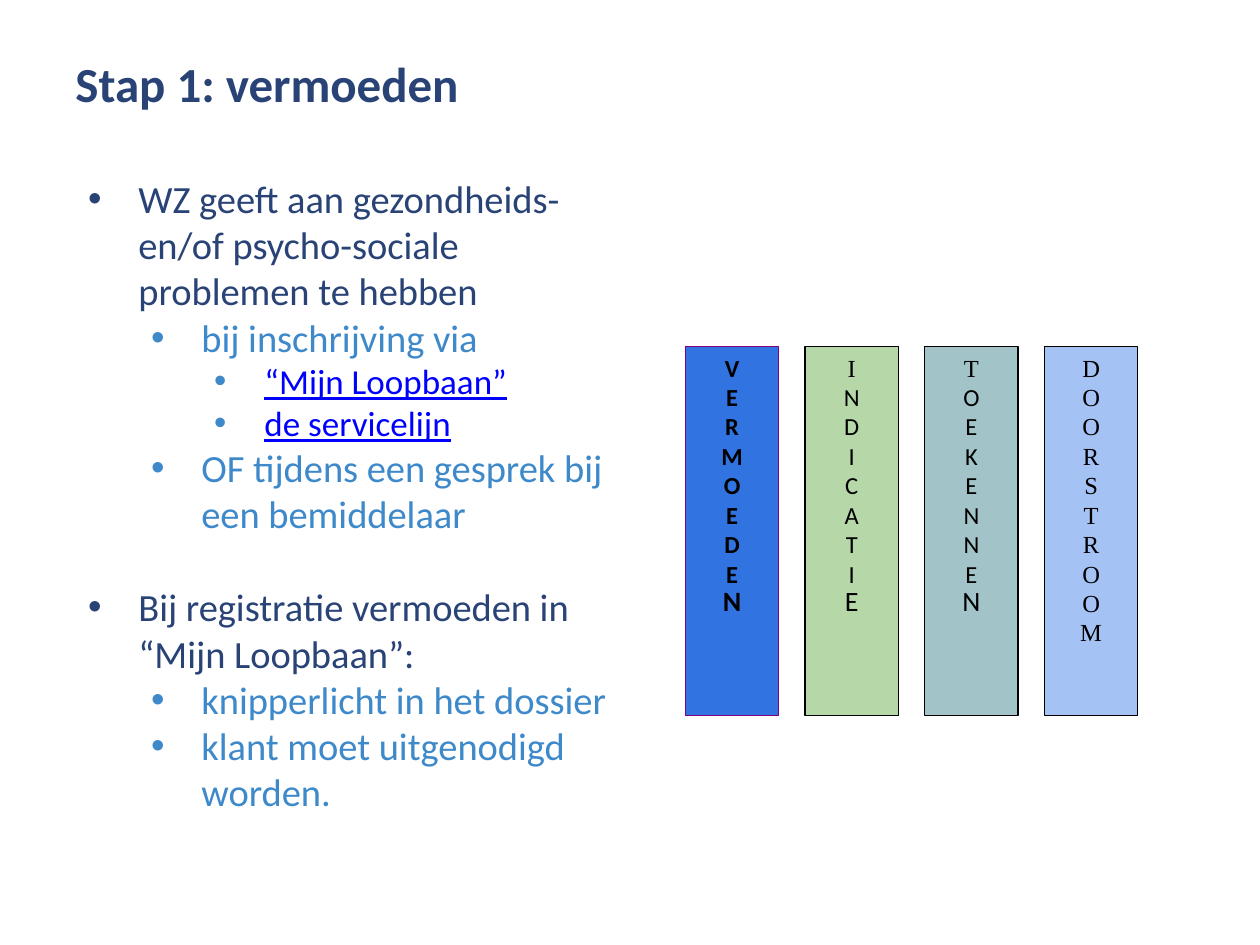
from pptx import Presentation
from pptx.dml.color import RGBColor
from pptx.enum import shapes, text
from pptx.oxml.ns import qn
from pptx.util import Inches, Pt
from lxml import etree

COLORS = {
    "navy": "294376", "sky": "3E89CA", "link": "0000FF", "black": "000000",
    "purple": "800080", "blue": "3174E1", "green": "B6D7A8",
    "teal": "A2C4C9", "pale": "A4C2F4",
}
SANS, SERIF = "Calibri", "Times New Roman"

TITLE = "Stap 1: vermoeden"
# level, wording, format
POINTS = [
    (0, "WZ geeft aan gezondheids- en/of psycho-sociale problemen te hebben", {}),
    (1, "bij inschrijving via", {}),
    (2, "“Mijn Loopbaan”", {"color": "link", "underline": True}),
    (2, "de servicelijn", {"color": "link", "underline": True}),
    (1, "OF tijdens een gesprek bij een bemiddelaar", {}),
    (0, "Bij registratie vermoeden in “Mijn Loopbaan”:", {"before": 27}),
    (1, "knipperlicht in het dossier", {}),
    (1, "klant moet uitgenodigd worden.", {}),
]
# size, colour per level
LEVELS = [(22, "navy"), (22, "sky"), (20, "sky")]
# word, fill, outline, font of first letter, font of the rest, last size, bold
STEPS = [
    ("VERMOEDEN", "blue", "purple", SANS, SANS, 16, True),
    ("INDICATIE", "green", "black", SERIF, SANS, 16, False),
    ("TOEKENNEN", "teal", "black", SERIF, SANS, 16, False),
    ("DOORSTROOM", "pale", "black", SERIF, SERIF, 14, False),
]
STEP_LEFT, STEP_TOP, STEP_WIDTH, STEP_HEIGHT, STEP_PITCH = 5.44, 2.75, 0.74, 2.93, 0.95


def rgb(name):
    return RGBColor.from_string(COLORS[name])


def add_bullet(paragraph, level, color):
    props = paragraph._p.get_or_add_pPr()
    props.set("marL", str(Inches(0.5 * (level + 1))))
    props.set("indent", str(Inches(-0.4)))
    bullet_color = etree.SubElement(props, qn("a:buClr"))
    etree.SubElement(bullet_color, qn("a:srgbClr"), val=COLORS[color])
    etree.SubElement(props, qn("a:buFont"), typeface="Arial")
    etree.SubElement(props, qn("a:buChar"), char="•")


def write(frame, wording, size=14, color="black", font=SANS, bold=False,
          underline=False, align=text.PP_ALIGN.LEFT, spacing=None, before=0,
          level=None, bullet_color=None):
    """Add one paragraph, using the frame's empty first paragraph if there is one."""
    first = frame.paragraphs[0]
    paragraph = frame.add_paragraph() if first.runs else first
    paragraph.alignment = align
    paragraph.space_before = Pt(before)
    if spacing:
        paragraph.line_spacing = Pt(spacing)
    if level is not None:
        paragraph.level = level
        add_bullet(paragraph, level, bullet_color)
    run = paragraph.add_run()
    run.text = wording
    run.font.size, run.font.name = Pt(size), font
    run.font.bold, run.font.underline = bold, underline
    run.font.color.rgb = rgb(color)


def add_text_frame(slide, left, top, width, height, anchor):
    box = slide.shapes.add_textbox(*map(Inches, (left, top, width, height)))
    frame = box.text_frame
    frame.word_wrap = True
    frame.vertical_anchor = anchor
    return frame


def add_step(slide, left, word, fill, outline, first_font, font, last_size, bold):
    step = slide.shapes.add_shape(
        shapes.MSO_SHAPE.RECTANGLE,
        *map(Inches, (left, STEP_TOP, STEP_WIDTH, STEP_HEIGHT)))
    step.shadow.inherit = False
    step.fill.solid()
    step.fill.fore_color.rgb = rgb(fill)
    step.line.color.rgb = rgb(outline)
    step.line.width = Pt(0.75)
    frame = step.text_frame
    frame.word_wrap = True
    frame.vertical_anchor = text.MSO_ANCHOR.TOP
    last = len(word) - 1
    for i, letter in enumerate(word):
        write(frame, letter, size=last_size if i == last else 14,
              font=font if i else first_font, bold=bold,
              align=text.PP_ALIGN.CENTER, spacing=16.8)


def main():
    deck = Presentation()
    deck.slide_width, deck.slide_height = Inches(10), Inches(7.5)
    slide = deck.slides.add_slide(deck.slide_layouts[6])

    title = add_text_frame(slide, 0.5, 0.22, 6.58, 0.72, text.MSO_ANCHOR.BOTTOM)
    write(title, TITLE, size=28, color="navy", bold=True)

    body = add_text_frame(slide, 0.5, 1.34, 4.42, 5.02, text.MSO_ANCHOR.TOP)
    for level, wording, extra in POINTS:
        size, color = LEVELS[level]
        style = {"size": size, "color": color, **extra}
        write(body, wording, level=level, bullet_color=color, **style)

    for i, step in enumerate(STEPS):
        add_step(slide, STEP_LEFT + i * STEP_PITCH, *step)

    deck.save("out.pptx")


if __name__ == "__main__":
    main()
